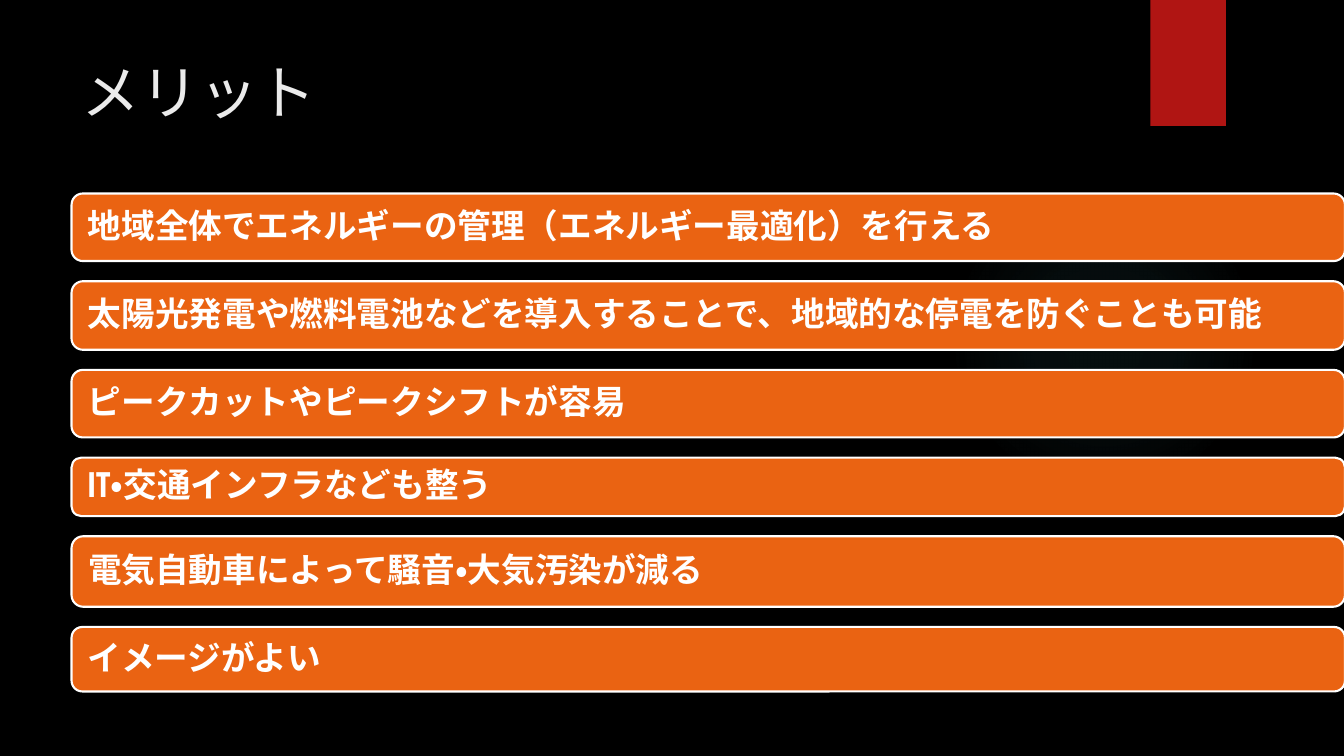
import pptx
import pptx.dml.color
import pptx.enum.lang
import pptx.enum.shapes
import pptx.enum.text
import pptx.oxml
import pptx.oxml.ns
import pptx.util
from dataclasses import dataclass

Inches = pptx.util.Inches
SHAPES = pptx.enum.shapes.MSO_SHAPE
ANCHORS = pptx.enum.text.MSO_ANCHOR


@dataclass
class Theme:
    font: str = "TeX Gyre Adventor"
    background: str = "000000"
    title: str = "EBEBEB"
    ribbon: str = "B01513"
    bar: str = "EA6312"
    light: str = "FFFFFF"
    glow: str = "50B9C1"
    title_size: int = 42
    bar_size: int = 24


def rgb(value):
    return pptx.dml.color.RGBColor.from_string(value)


def apply_format(target, values):
    for name, value in values.items():
        setattr(target, name, value)


class SlideBuilder:
    def __init__(self, slide, theme):
        self.slide = slide
        self.theme = theme
        slide.background.fill.solid()
        slide.background.fill.fore_color.rgb = rgb(theme.background)

    def shape(self, kind, left, top, width, height, fill, line=None):
        shape = self.slide.shapes.add_shape(
            kind, Inches(left), Inches(top), Inches(width), Inches(height))
        shape.shadow.inherit = False
        shape.fill.solid()
        shape.fill.fore_color.rgb = rgb(fill)
        if line:
            shape.line.color.rgb = rgb(line)
            shape.line.width = pptx.util.Pt(1.5)
        else:
            shape.line.fill.background()
        return shape

    def glow(self, left, top, diameter, stops):
        """Circle that fades out from its centre; stops are (position %, opacity %)."""
        shape = self.shape(SHAPES.OVAL, left, top, diameter, diameter, self.theme.glow)
        stop_xml = "".join(
            f'<a:gs pos="{position * 1000}"><a:srgbClr val="{self.theme.glow}">'
            f'<a:alpha val="{opacity * 1000}"/></a:srgbClr></a:gs>'
            for position, opacity in stops)
        gradient = pptx.oxml.parse_xml(
            f'<a:gradFill {pptx.oxml.ns.nsdecls("a")}><a:gsLst>{stop_xml}</a:gsLst>'
            '<a:path path="circle"><a:fillToRect l="50000" t="50000" r="50000" b="50000"/>'
            '</a:path></a:gradFill>')
        properties = shape.element.spPr
        solid = properties.find(pptx.oxml.ns.qn("a:solidFill"))
        properties.replace(solid, gradient)

    def set_text(self, shape, text, size, color, anchor, inset, bold=False, spacing=1.0):
        frame = shape.text_frame
        apply_format(frame, {
            "word_wrap": True, "vertical_anchor": anchor,
            "margin_left": Inches(inset), "margin_right": Inches(inset),
            "margin_top": Inches(0.05), "margin_bottom": Inches(0.05)})
        paragraph = frame.paragraphs[0]
        apply_format(paragraph, {
            "alignment": pptx.enum.text.PP_ALIGN.LEFT, "line_spacing": spacing})
        run = paragraph.add_run()
        run.text = text
        apply_format(run.font, {
            "name": self.theme.font, "size": pptx.util.Pt(size), "bold": bold,
            "language_id": pptx.enum.lang.MSO_LANGUAGE_ID.JAPANESE})
        run.font.color.rgb = rgb(color)

    def title(self, text, left, top, width, height):
        box = self.slide.shapes.add_textbox(
            Inches(left), Inches(top), Inches(width), Inches(height))
        self.set_text(box, text, self.theme.title_size, self.theme.title, ANCHORS.TOP, 0.1)

    def bar(self, text, left, top, width, height):
        shape = self.shape(SHAPES.ROUNDED_RECTANGLE, left, top, width, height,
                           self.theme.bar, self.theme.light)
        self.set_text(shape, text, self.theme.bar_size, self.theme.light,
                      ANCHORS.MIDDLE, 0.13, bold=True, spacing=0.9)


MERITS = [  # text, bar height
    ("地域全体でエネルギーの管理（エネルギー最適化）を行える", 0.67),
    ("太陽光発電や燃料電池などを導入することで、地域的な停電を防ぐことも可能", 0.68),
    ("ピークカットやピークシフトが容易", 0.67),
    ("IT・交通インフラなども整う", 0.58),
    ("電気自動車によって騒音・大気汚染が減る", 0.7),
    ("イメージがよい", 0.64),
]
BAR_GAP = 0.2


def main():
    presentation = pptx.Presentation()
    presentation.slide_width = Inches(13.33)
    presentation.slide_height = Inches(7.5)
    slide = presentation.slides.add_slide(presentation.slide_layouts[6])
    theme = Theme()
    builder = SlideBuilder(slide, theme)

    # Backdrop
    builder.glow(9.41, 1.83, 3.08, [(0, 7), (36, 6), (69, 0)])
    builder.shape(SHAPES.RECTANGLE, 11.41, 0, 0.75, 1.25, theme.ribbon)

    # Title
    builder.title("メリット", 0.71, 0.5, 10.29, 1.53)

    # Stacked merit bars
    top = 1.92
    for text, height in MERITS:
        builder.bar(text, 0.71, top, 12.63, height)
        top += height + BAR_GAP

    presentation.save("out.pptx")


if __name__ == "__main__":
    main()
